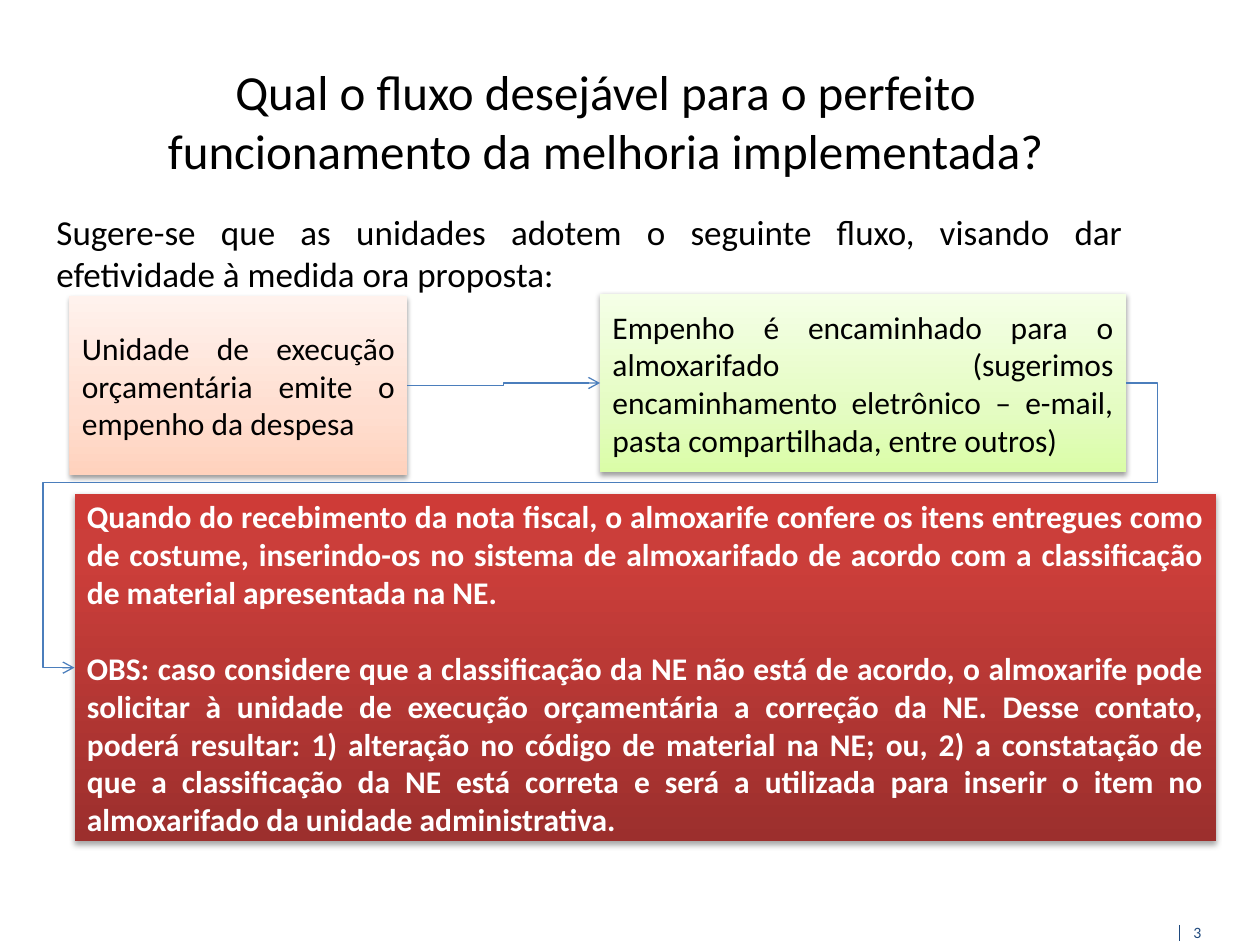
import pptx
import pptx.util
import pptx.dml.color
import pptx.enum.shapes
import pptx.enum.text
import pptx.oxml
import pptx.oxml.ns
from lxml import etree

Pt = pptx.util.Pt
qn = pptx.oxml.ns.qn
ALIGN = pptx.enum.text.PP_ALIGN
ANCHOR = pptx.enum.text.MSO_ANCHOR
KIND = pptx.enum.shapes.MSO_CONNECTOR

COLORS = {"ink": "000000", "white": "FFFFFF", "navy": "1F497D", "link": "4B7EBC"}
GRADS = {
    "peach": [(0, "FFD2BD"), (35, "FFDED0"), (100, "FFF2ED")],
    "lime": [(0, "DAFDA7"), (35, "E4FCC2"), (100, "F5FFE7")],
    "red": [(0, "9C2F2D"), (80, "CB3E3A"), (100, "CE3B37")],
}
RIGHT, LEFT = 3, 1

TITLE = "Qual o fluxo desejável para o perfeito funcionamento da melhoria implementada?"
INTRO = ("Sugere-se que as unidades adotem o seguinte fluxo, visando dar "
         "efetividade à medida ora proposta:")
ISSUE = "Unidade de execução orçamentária emite o empenho da despesa"
SEND = ("Empenho é encaminhado para o almoxarifado (sugerimos encaminhamento "
        "eletrônico – e-mail, pasta compartilhada, entre outros)")
CHECK = [
    "Quando do recebimento da nota fiscal, o almoxarife confere os itens entregues "
    "como de costume, inserindo-os no sistema de almoxarifado de acordo com a "
    "classificação de material apresentada na NE.",
    "OBS: caso considere que a classificação da NE não está de acordo, o almoxarife "
    "pode solicitar à unidade de execução orçamentária a correção da NE. Desse "
    "contato, poderá resultar: 1) alteração no código de material na NE; ou, 2) a "
    "constatação de que a classificação da NE está correta e será a utilizada para "
    "inserir o item no almoxarifado da unidade administrativa.",
]


def rgb(name):
    return pptx.dml.color.RGBColor.from_string(COLORS[name])


def apply(obj, form):
    for key, val in form.items():
        setattr(obj, key, val)


def write(shape, texts, size, color="ink", align=ALIGN.JUSTIFY, bold=False,
          gap=0, **frame):
    """Fill a shape with paragraphs, gap points apart."""
    body = shape.text_frame
    apply(body, {"word_wrap": True, "auto_size": pptx.enum.text.MSO_AUTO_SIZE.NONE,
                 "vertical_anchor": ANCHOR.TOP, **frame})
    for i, text in enumerate(texts):
        para = body.paragraphs[0] if i == 0 else body.add_paragraph()
        para.text = text
        para.alignment = align
        if i and gap:
            para.space_before = Pt(gap)
        apply(para.font, {"name": "Calibri", "size": Pt(size), "bold": bold})
        para.font.color.rgb = rgb(color)


def head(slide, x, y, w, h):
    title = slide.shapes.title
    apply(title, {"left": Pt(x), "top": Pt(y), "width": Pt(w), "height": Pt(h)})
    write(title, [TITLE], 28, align=ALIGN.CENTER)


def intro(slide, x, y, w, h):
    write(slide.shapes.add_textbox(Pt(x), Pt(y), Pt(w), Pt(h)), [INTRO], 20)


def shade(shape, grad, alpha, dist):
    """Give a shape an upward gradient and a soft shadow below."""
    shape.fill.gradient()
    shape.fill.gradient_angle = 90
    stops = shape.element.spPr.find(".//" + qn("a:gsLst"))
    stops.clear()
    for pos, color in GRADS[grad]:
        stop = etree.SubElement(stops, qn("a:gs"), pos=str(pos * 1000))
        etree.SubElement(stop, qn("a:srgbClr"), val=color)
    shape.line.fill.background()
    shape.shadow.inherit = False
    cast = etree.SubElement(
        shape.element.spPr.find(qn("a:effectLst")), qn("a:outerShdw"),
        blurRad=str(Pt(3.1)), dist=str(Pt(dist)), dir="5400000", rotWithShape="0")
    tint = etree.SubElement(cast, qn("a:srgbClr"), val=COLORS["ink"])
    etree.SubElement(tint, qn("a:alpha"), val=str(alpha * 1000))


def step(slide, x, y, w, h, texts, grad, alpha=38, dist=1.6, **form):
    box = slide.shapes.add_shape(pptx.enum.shapes.MSO_SHAPE.RECTANGLE,
                                 Pt(x), Pt(y), Pt(w), Pt(h))
    shade(box, grad, alpha, dist)
    write(box, texts, 18, vertical_anchor=ANCHOR.MIDDLE, **form)
    return box


def stroke(slide, kind, color, x=0, y=0, x2=0, y2=0):
    line = slide.shapes.add_connector(kind, Pt(x), Pt(y), Pt(x2), Pt(y2))
    line.line.width = Pt(0.75)
    line.line.color.rgb = rgb(color)
    etree.SubElement(line.element.spPr, qn("a:effectLst"))
    return line


def link(slide, start, end, bends=None):
    """Join two steps with an elbow arrow; bends sets a five-part route."""
    line = stroke(slide, KIND.ELBOW, "link")
    line.begin_connect(start, RIGHT)
    line.end_connect(end, LEFT)
    etree.SubElement(line.line._get_or_add_ln(), qn("a:tailEnd"), type="arrow")
    if bends:
        geom = line.element.spPr.find(qn("a:prstGeom"))
        geom.set("prst", "bentConnector5")
        guides = geom.get_or_add_avLst()
        for i, bend in enumerate(bends, 1):
            etree.SubElement(guides, qn("a:gd"), name=f"adj{i}",
                             fmla=f"val {round(bend * 100000)}")


def flow(slide, x, y):
    issue = step(slide, x, y + 1.4, 193, 102.2, [ISSUE], "peach")
    send = step(slide, x + 303.2, y, 300.5, 102.2, [SEND], "lime")
    check = step(slide, x + 2.9, y + 114.4, 652.3, 198.7, CHECK, "red", 35, 1.8,
                 color="white", bold=True, gap=22)
    link(slide, issue, send)
    link(slide, send, check, [-0.03, 0.35, 1.03])


def foot(slide, x, y, h):
    stroke(slide, KIND.STRAIGHT, "navy", x, y, x, y + h)
    num = slide.shapes.add_textbox(Pt(x + 8), Pt(y), Pt(14.4), Pt(10))
    write(num, ["3"], 9, "navy", ALIGN.LEFT, word_wrap=False, margin_left=0,
          margin_top=0, margin_right=0, margin_bottom=0)
    num.text_frame.paragraphs[0].line_spacing = 0.9


def main():
    deck = pptx.Presentation()
    apply(deck, {"slide_width": Pt(720), "slide_height": Pt(540)})
    slide = deck.slides.add_slide(deck.slide_layouts[5])
    head(slide, 59.8, 31.7, 572.4, 74.9)
    intro(slide, 25.2, 116.6, 623.5, 55.4)
    flow(slide, 39.7, 167.8)
    foot(slide, 673.9, 528.5, 9.4)
    deck.save("out.pptx")


if __name__ == "__main__":
    main()
